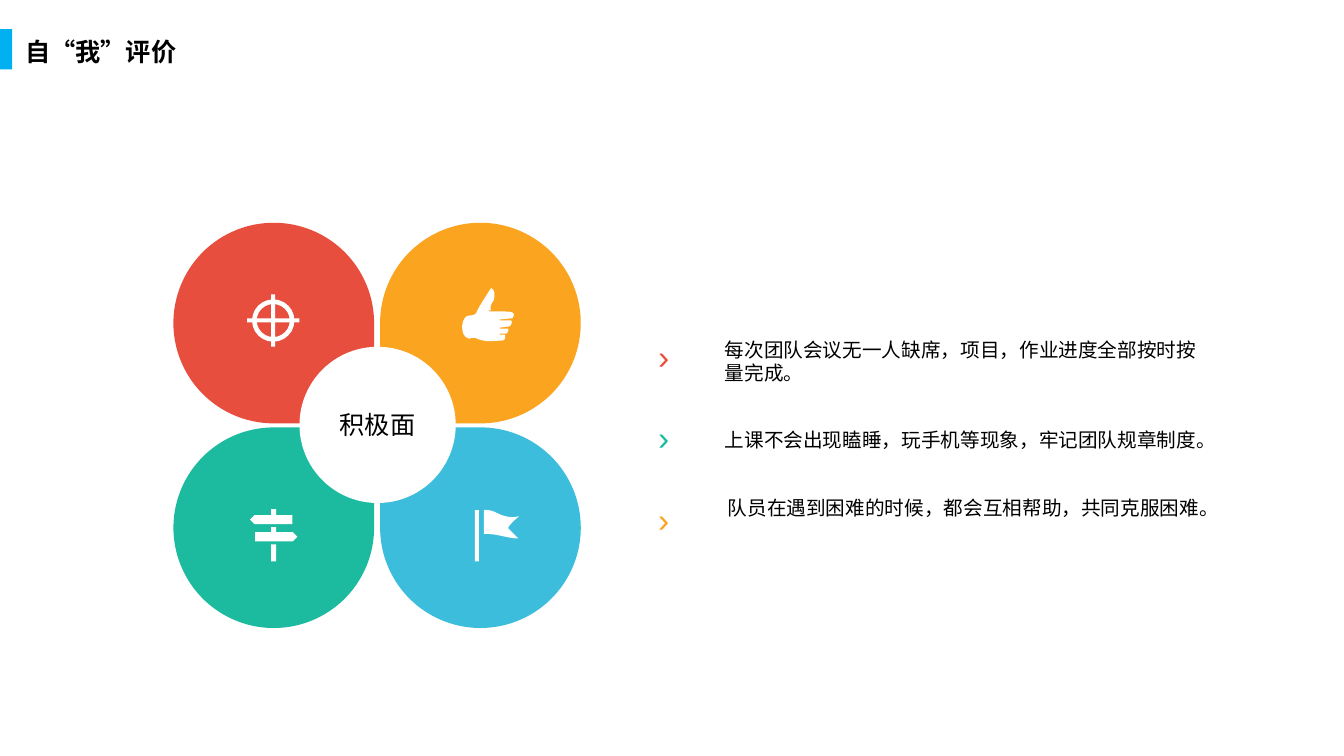
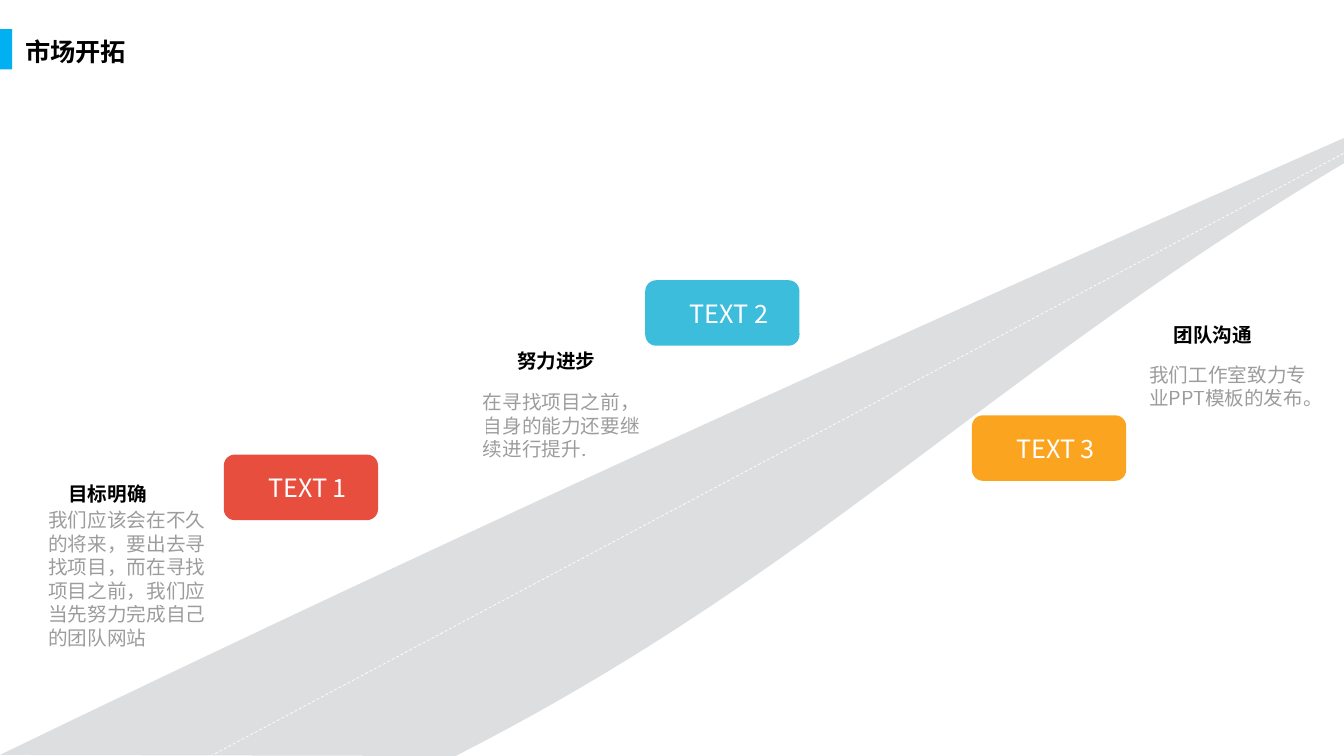
from dataclasses import dataclass
from typing import NamedTuple

from lxml import etree
from pptx import Presentation
from pptx.dml.color import RGBColor
from pptx.enum.dml import MSO_LINE
from pptx.enum.shapes import MSO_CONNECTOR, MSO_SHAPE
from pptx.enum.text import MSO_ANCHOR, MSO_AUTO_SIZE, PP_ALIGN
from pptx.oxml.ns import qn
from pptx.shapes.autoshape import Shape
from pptx.slide import Slide
from pptx.util import Inches, Pt


@dataclass(frozen=True)
class Theme:
    white: str = "FFFFFF"
    black: str = "000000"
    accent: str = "00B0F0"
    red: str = "E74E3E"
    orange: str = "FBA41F"
    green: str = "1CBB9F"
    blue: str = "3CBDDC"
    road: str = "DDDEE0"
    font: str = "Noto Sans CJK SC"
    label_font: str = "Calibri"
    marker_font: str = "Arial"
    title_size: int = 18
    body_size: int = 14
    marker_size: int = 24
    faded: int = 38  # opacity in percent


THEME = Theme()


class Box(NamedTuple):
    left: float
    top: float
    width: float
    height: float


class Point(NamedTuple):
    x: float
    y: float


class Petal(NamedTuple):
    column: int
    row: int
    rotation: int
    color: str


class Remark(NamedTuple):
    text: str
    color: str
    left: float
    top: float
    height: float


class Milestone(NamedTuple):
    label: str
    color: str
    sign: Point
    heading: str
    heading_at: Point
    body: str
    body_at: Point
    body_height: float


PETALS = (
    Petal(0, 1, 0, THEME.green),
    Petal(1, 1, 270, THEME.blue),
    Petal(0, 0, 90, THEME.red),
    Petal(1, 0, 180, THEME.orange),
)
REMARKS = (
    Remark("每次团队会议无一人缺席，项目，作业进度全部按时按量完成。", THEME.red, 7.09, 3.3, 0.57),
    Remark("上课不会出现瞌睡，玩手机等现象，牢记团队规章制度。", THEME.green, 7.09, 4.2, 0.34),
    Remark("队员在遇到困难的时候，都会互相帮助，共同克服困难。", THEME.orange, 7.12, 4.87, 0.34),
)
MILESTONES = (
    Milestone("TEXT 1", THEME.red, Point(2.22, 4.51), "目标明确", Point(0.58, 4.73),
              "我们应该会在不久的将来，要出去寻找项目，而在寻找项目之前，我们应当先努力完成自己的团队网站",
              Point(0.38, 4.99), 1.51),
    Milestone("TEXT 2", THEME.blue, Point(6.4, 2.78), "努力进步", Point(5.03, 3.41),
              "在寻找项目之前，自身的能力还要继续进行提升.", Point(4.69, 3.82), 0.81),
    Milestone("TEXT 3", THEME.orange, Point(9.64, 4.12), "团队沟通", Point(11.54, 3.15),
              "我们工作室致力专业PPT模板的发布。", Point(11.3, 3.55), 0.57),
)

# Outlines: two numbers are a corner, six are a cubic curve.
Outline = tuple[tuple[float, ...], ...]
THUMB: Outline = (
    (4.96, 3.26), (4.95, 3.25), (4.97, 3.25),
    (4.97, 3.25, 5.02, 3.24, 5.05, 3.24), (5.08, 3.22, 5.08, 3.19, 5.07, 3.18),
    (4.96, 3.18), (4.95, 3.17), (4.96, 3.17), (5.06, 3.16), (5.08, 3.16),
    (5.09, 3.14, 5.11, 3.12, 5.08, 3.1), (5.06, 3.09, 4.99, 3.09, 4.94, 3.09),
    (4.85, 3.09), (4.84, 3.08), (4.87, 3.08),
    (4.85, 3.03, 4.89, 3, 4.9, 2.97), (4.92, 2.87, 4.87, 2.86, 4.87, 2.86),
    (4.87, 2.86, 4.75, 3.04, 4.73, 3.09), (4.72, 3.13, 4.67, 3.13, 4.66, 3.13),
    (4.57, 3.12, 4.55, 3.34, 4.65, 3.36), (4.67, 3.36, 4.69, 3.34, 4.73, 3.36),
    (4.82, 3.4, 4.9, 3.38, 4.97, 3.38), (5.02, 3.38, 5.01, 3.34, 5.01, 3.32),
    (4.95, 3.32), (4.96, 3.31), (5.02, 3.31),
    (5.05, 3.29, 5.04, 3.27, 5.04, 3.26), (4.97, 3.26),
)
FLAG: Outline = (
    (5.04, 5.24), (5.04, 5.21, 5.15, 5.12, 5.15, 5.12),
    (5.09, 5.14, 5.01, 5.13, 4.93, 5.09), (4.86, 5.05, 4.8, 5.06, 4.8, 5.06),
    (4.8, 5.3), (4.8, 5.3, 4.82, 5.29, 4.87, 5.3),
    (4.93, 5.3, 5.09, 5.35, 5.14, 5.34),
)
ROAD: Outline = (
    (0, 7.49), (4.4, 5.36, 8.88, 3.33, 13.33, 1.37),
    (13.33, 1.62), (9.78, 3.73, 8.09, 5.68, 4.52, 7.5),
)


def paint(shape: Shape, color: str) -> None:
    shape.shadow.inherit = False
    shape.fill.solid()
    shape.fill.fore_color.rgb = RGBColor.from_string(color)
    shape.line.fill.background()


def add_shape(slide: Slide, kind: MSO_SHAPE, box: Box, color: str, rotation: int = 0) -> Shape:
    shape = slide.shapes.add_shape(kind, *map(Inches, box))
    shape.rotation = rotation
    paint(shape, color)
    return shape


def add_outline(slide: Slide, outline: Outline, color: str, steps: int = 8) -> None:
    """Draw a closed freeform, with each curve divided into short lines."""
    points = [Point(*outline[0])]
    for segment in outline[1:]:
        if len(segment) == 2:
            points.append(Point(*segment))
            continue
        start, knots = points[-1], (segment[::2], segment[1::2])
        for step in range(1, steps + 1):
            t = step / steps
            points.append(Point(*(
                (1 - t) ** 3 * a + 3 * (1 - t) ** 2 * t * b + 3 * (1 - t) * t**2 * c + t**3 * d
                for a, (b, c, d) in zip(start, knots)
            )))
    corners = [(Inches(point.x), Inches(point.y)) for point in points]
    builder = slide.shapes.build_freeform(*corners[0])
    builder.add_line_segments(corners[1:], close=True)
    paint(builder.convert_to_shape(), color)


def write_text(shape: Shape, text: str, *, size: int = THEME.body_size, color: str = THEME.black,
               font: str = THEME.font, bold: bool = False, opacity: int = 100,
               align: PP_ALIGN = PP_ALIGN.LEFT, wrap: bool = True) -> None:
    shape.text_frame.word_wrap = wrap
    paragraph = shape.text_frame.paragraphs[0]
    paragraph.alignment = align
    run = paragraph.add_run()
    run.text = text
    run.font.size = Pt(size)
    run.font.bold = bold
    run.font.color.rgb = RGBColor.from_string(color)
    run.font.name = font
    properties = run.font._element
    east_asian = etree.Element(qn("a:ea"), typeface=THEME.font)
    properties.find(qn("a:latin")).addnext(east_asian)
    if opacity < 100:
        tone = properties.find(f"{qn('a:solidFill')}/{qn('a:srgbClr')}")
        etree.SubElement(tone, qn("a:alpha"), val=str(opacity * 1000))


def add_text(slide: Slide, text: str, box: Box, **text_format) -> None:
    text_box = slide.shapes.add_textbox(*map(Inches, box))
    text_box.text_frame.auto_size = MSO_AUTO_SIZE.SHAPE_TO_FIT_TEXT
    write_text(text_box, text, **text_format)


def add_titled_slide(presentation: Presentation, title: str) -> Slide:
    slide = presentation.slides.add_slide(presentation.slide_layouts[6])
    add_text(slide, title, Box(0.15, 0.31, 2.89, 0.4), size=THEME.title_size, bold=True)
    add_shape(slide, MSO_SHAPE.RECTANGLE, Box(0, 0.29, 0.12, 0.4), THEME.accent)
    return slide


def add_white_bars(slide: Slide, *bars: Box) -> None:
    for bar in bars:
        add_shape(slide, MSO_SHAPE.RECTANGLE, bar, THEME.white)


def add_target_icon(slide: Slide) -> None:
    ring = add_shape(slide, MSO_SHAPE.DONUT, Box(2.5, 2.97, 0.42, 0.42), THEME.white)
    ring.adjustments[0] = 0.11
    add_white_bars(slide, Box(2.69, 2.92, 0.04, 0.52), Box(2.45, 3.16, 0.52, 0.04))


def add_signpost_icon(slide: Slide) -> None:
    add_white_bars(slide, *(Box(2.69, top, 0.05, height)
                            for top, height in ((5.05, 0.07), (5.23, 0.06), (5.4, 0.17))))
    for left, top, rotation in ((2.48, 5.11, 180), (2.53, 5.28, 0)):
        add_shape(slide, MSO_SHAPE.PENTAGON, Box(left, top, 0.42, 0.09), THEME.white, rotation)


def add_flag_icon(slide: Slide) -> None:
    add_outline(slide, FLAG, THEME.white)
    add_white_bars(slide, Box(4.71, 5.06, 0.04, 0.51))


def build_evaluation(presentation: Presentation) -> None:
    slide = add_titled_slide(presentation, "自“我”评价")
    for petal in PETALS:
        box = Box(1.72 + 2.05 * petal.column, 2.21 + 2.03 * petal.row, 1.99, 1.99)
        add_shape(slide, MSO_SHAPE.TEAR, box, petal.color, petal.rotation)
    center = add_shape(slide, MSO_SHAPE.OVAL, Box(2.97, 3.44, 1.55, 1.55), THEME.white)
    center.text_frame.vertical_anchor = MSO_ANCHOR.MIDDLE
    write_text(center, "积极面", size=THEME.title_size, font=THEME.label_font,
               align=PP_ALIGN.CENTER)
    add_target_icon(slide)
    add_outline(slide, THUMB, THEME.white)
    add_signpost_icon(slide)
    add_flag_icon(slide)
    for index, remark in enumerate(REMARKS):
        add_text(slide, "›", Box(6.43, 3.28 + 0.81 * index, 0.27, 0.5), size=THEME.marker_size,
                 font=THEME.marker_font, color=remark.color, wrap=False)
        add_text(slide, remark.text, Box(remark.left, remark.top, 5.02, remark.height))


def add_center_line(slide: Slide, start: Point, end: Point) -> None:
    connector = slide.shapes.add_connector(
        MSO_CONNECTOR.STRAIGHT, *map(Inches, (*start, *end)))
    connector.line.color.rgb = RGBColor.from_string(THEME.white)
    connector.line.width = Pt(0.5)
    connector.line.dash_style = MSO_LINE.DASH
    etree.SubElement(connector._element.spPr, qn("a:effectLst"))


def add_milestone(slide: Slide, milestone: Milestone) -> None:
    sign = add_shape(slide, MSO_SHAPE.ROUNDED_RECTANGLE, Box(*milestone.sign, 1.53, 0.65),
                     milestone.color)
    sign.text_frame.margin_left = Inches(0.41)
    sign.text_frame.vertical_anchor = MSO_ANCHOR.MIDDLE
    write_text(sign, milestone.label, size=THEME.title_size, color=THEME.white)
    add_text(slide, milestone.body, Box(*milestone.body_at, 1.92, milestone.body_height),
             opacity=THEME.faded)
    add_text(slide, milestone.heading, Box(*milestone.heading_at, 1.2, 0.34), bold=True)


def build_market(presentation: Presentation) -> None:
    slide = add_titled_slide(presentation, "市场开拓")
    add_outline(slide, ROAD, THEME.road, steps=40)
    add_center_line(slide, Point(2.09, 7.5), Point(13.33, 1.52))
    for milestone in MILESTONES:
        add_milestone(slide, milestone)


def main() -> None:
    presentation = Presentation()
    presentation.slide_width = Inches(13.33)
    presentation.slide_height = Inches(7.5)
    build_evaluation(presentation)
    build_market(presentation)
    presentation.save("out.pptx")


if __name__ == "__main__":
    main()
